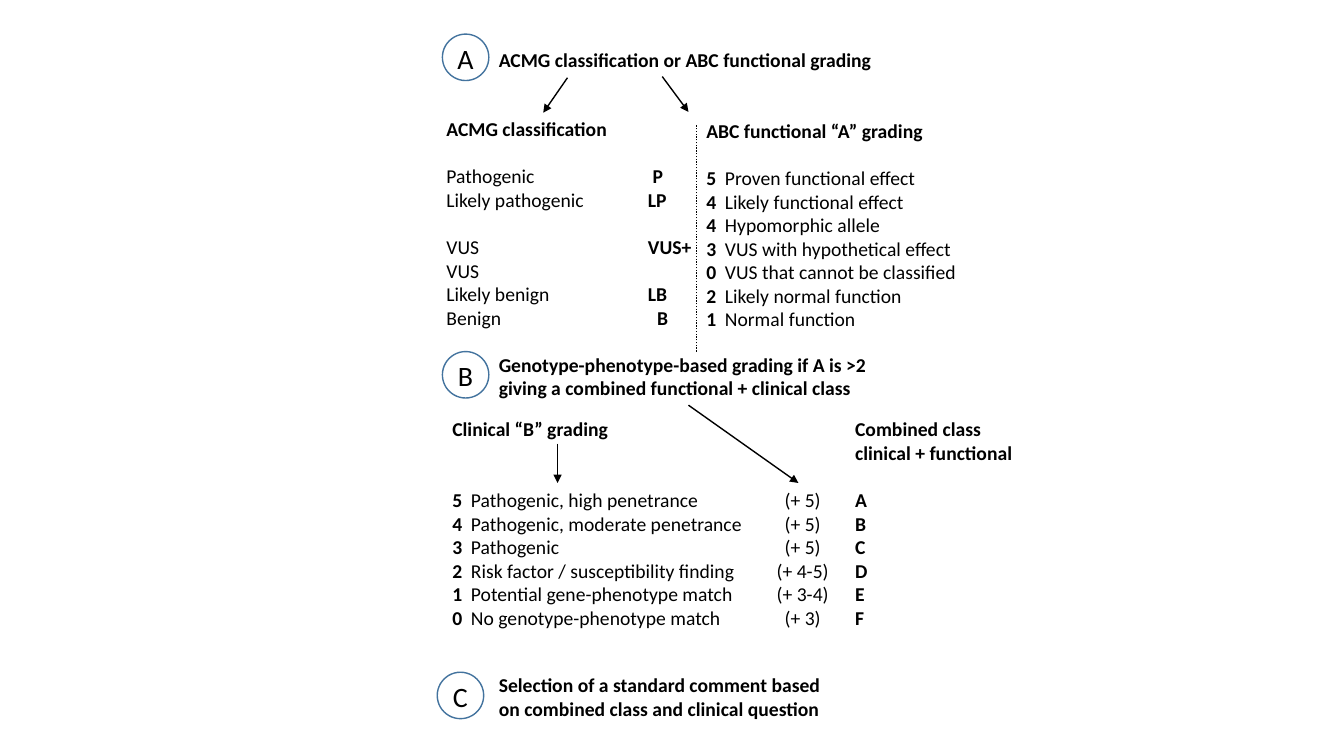
"""Build the slide on ACMG classification and ABC grading of variants."""
from dataclasses import dataclass

from lxml.etree import SubElement
from pptx import Presentation
from pptx.dml.color import RGBColor
from pptx.enum.dml import MSO_LINE_DASH_STYLE as DASH
from pptx.enum.shapes import MSO_CONNECTOR, MSO_SHAPE
from pptx.enum.text import MSO_ANCHOR, PP_ALIGN
from pptx.oxml.ns import qn
from pptx.slide import Slide
from pptx.util import Cm, Pt

BLACK = RGBColor(0, 0, 0)
BLUE = RGBColor(0x43, 0x73, 0x9E)
FONT = "Calibri"
LINE_GAP = 17
RING = 1.17
NUMBER, CODE, SCORE, CLASS = 0.47, 5.08, 8.83, 10.15


@dataclass
class Row:
    """One line of text; parts between asterisks are bold."""
    text: str
    stops: tuple[tuple[float, str], ...] = ()
    gap: float = 0


@dataclass
class Block:
    """A text box with its rows, in centimetres."""
    x: float
    y: float
    w: float
    h: float
    rows: list[Row]


@dataclass
class Ring:
    """A circled step letter."""
    letter: str
    x: float
    y: float


@dataclass
class Link:
    """A straight line, either an arrow or a dotted divider."""
    x1: float
    y1: float
    x2: float
    y2: float
    dotted: bool = False


def headings(*lines: str) -> list[Row]:
    """Return bold rows."""
    return [Row(f"*{line}*") for line in lines]


def code_row(name: str, code: str = "", shift: float = 0, gap: float = 0) -> Row:
    """Return a classification name with its code in the second column."""
    text = f"{name}\t*{code}*" if code else name
    return Row(text, ((CODE + shift, "l"),), gap)


def grade_row(grade: int, label: str, gap: float = 0) -> Row:
    """Return a numbered functional grade."""
    return Row(f"*{grade}*\t{label}", ((NUMBER, "l"),), gap)


def clinical_row(grade: int, label: str, score: str, letter: str, gap: float = 0) -> Row:
    """Return a numbered clinical grade with its score and combined class."""
    stops = ((NUMBER, "l"), (SCORE, "ctr"), (CLASS, "l"))
    return Row(f"*{grade}*\t{label}\t({score})\t*{letter}*", stops, gap)


BLOCKS = [
    Block(12.32, 1.09, 9.98, 0.86, headings("ACMG classification or ABC functional grading")),
    Block(11, 2.82, 6.76, 5.64, headings("ACMG classification") + [
        code_row("Pathogenic", "P", 0.12, LINE_GAP),
        code_row("Likely pathogenic", "LP"),
        code_row("VUS", "VUS+", gap=LINE_GAP),
        code_row("VUS"),
        code_row("Likely benign", "LB"),
        code_row("Benign", "B", 0.23),
    ]),
    Block(17.55, 2.87, 7.09, 5.64, headings("ABC functional “A” grading") + [
        grade_row(5, "Proven functional effect", LINE_GAP),
        grade_row(4, "Likely functional effect"),
        grade_row(4, "Hypomorphic allele"),
        grade_row(3, "VUS with hypothetical effect"),
        grade_row(0, "VUS that cannot be classified"),
        grade_row(2, "Likely normal function"),
        grade_row(1, "Normal function"),
    ]),
    Block(11.15, 10.39, 14.88, 6.25, [
        Row("*Clinical “B” grading\tCombined class*", ((CLASS, "l"),)),
        Row("*\tclinical + functional*", ((CLASS, "l"),)),
        clinical_row(5, "Pathogenic, high penetrance", "+ 5", "A", LINE_GAP),
        clinical_row(4, "Pathogenic, moderate penetrance", "+ 5", "B"),
        clinical_row(3, "Pathogenic", "+ 5", "C"),
        clinical_row(2, "Risk factor / susceptibility finding", "+ 4-5", "D"),
        clinical_row(1, "Potential gene-phenotype match", "+ 3-4", "E"),
        clinical_row(0, "No genotype-phenotype match", "+ 3", "F"),
    ]),
    Block(12.32, 8.76, 10.06, 1.45, headings(
        "Genotype-phenotype-based grading if A is >2",
        "giving a combined functional + clinical class")),
    Block(12.32, 16.84, 9.12, 1.45, headings(
        "Selection of a standard comment based",
        "on combined class and clinical question")),
]
RINGS = [Ring("A", 11.15, 0.86), Ring("B", 11.15, 8.86), Ring("C", 11.02, 16.94)]
LINKS = [
    Link(16.69, 1.93, 17.35, 2.82),
    Link(14.3, 1.96, 13.69, 2.84),
    Link(17.55, 8.86, 17.55, 3.15, dotted=True),
    Link(14.05, 11.18, 14.05, 12.17),
    Link(17.35, 10.21, 20.12, 12.17),
]


def add_run(p, text: str, *, size: float = 14, bold: bool = False) -> None:
    """Add a formatted run to a paragraph."""
    r = p.add_run()
    r.text = text
    r.font.name, r.font.size, r.font.bold = FONT, Pt(size), bold
    r.font.color.rgb = BLACK


def add_block(s: Slide, block: Block) -> None:
    """Draw a text box row by row."""
    tf = s.shapes.add_textbox(Cm(block.x), Cm(block.y), Cm(block.w), Cm(block.h)).text_frame
    tf.word_wrap = True
    for i, row in enumerate(block.rows):
        p = tf.add_paragraph() if i else tf.paragraphs[0]
        p.space_before = Pt(row.gap)
        if row.stops:
            tabs = SubElement(p._p.get_or_add_pPr(), qn("a:tabLst"))
            for pos, align in row.stops:
                SubElement(tabs, qn("a:tab"), pos=str(Cm(pos)), algn=align)
        for j, part in enumerate(row.text.split("*")):
            if part:
                add_run(p, part, bold=j % 2 == 1)


def add_ring(s: Slide, ring: Ring) -> None:
    """Draw a circle with its letter."""
    sp = s.shapes.add_shape(MSO_SHAPE.OVAL, Cm(ring.x), Cm(ring.y), Cm(RING), Cm(RING))
    sp.shadow.inherit = False
    sp.fill.background()
    sp.line.color.rgb, sp.line.width = BLUE, Pt(1)
    tf = sp.text_frame
    tf.margin_left = tf.margin_right = tf.margin_bottom = 0
    tf.margin_top = Cm(0.05)
    tf.vertical_anchor = MSO_ANCHOR.MIDDLE
    p = tf.paragraphs[0]
    p.alignment = PP_ALIGN.CENTER
    add_run(p, ring.letter, size=20)


def add_link(s: Slide, link: Link) -> None:
    """Draw an arrow or a dotted divider."""
    ends = (Cm(v) for v in (link.x1, link.y1, link.x2, link.y2))
    cx = s.shapes.add_connector(MSO_CONNECTOR.STRAIGHT, *ends)
    cx.line.color.rgb, cx.line.width = BLACK, Pt(1)
    if link.dotted:
        cx.line.dash_style = DASH.ROUND_DOT
    else:
        SubElement(cx.line._get_or_add_ln(), qn("a:tailEnd"), type="triangle")
    SubElement(cx._element.spPr, qn("a:effectLst"))


def main() -> None:
    """Build and save the slide."""
    prs = Presentation()
    prs.slide_width, prs.slide_height = Cm(33.87), Cm(19.05)
    s = prs.slides.add_slide(prs.slide_layouts[6])
    for items, draw in ((BLOCKS, add_block), (RINGS, add_ring), (LINKS, add_link)):
        for item in items:
            draw(s, item)
    prs.save("out.pptx")


if __name__ == "__main__":
    main()
